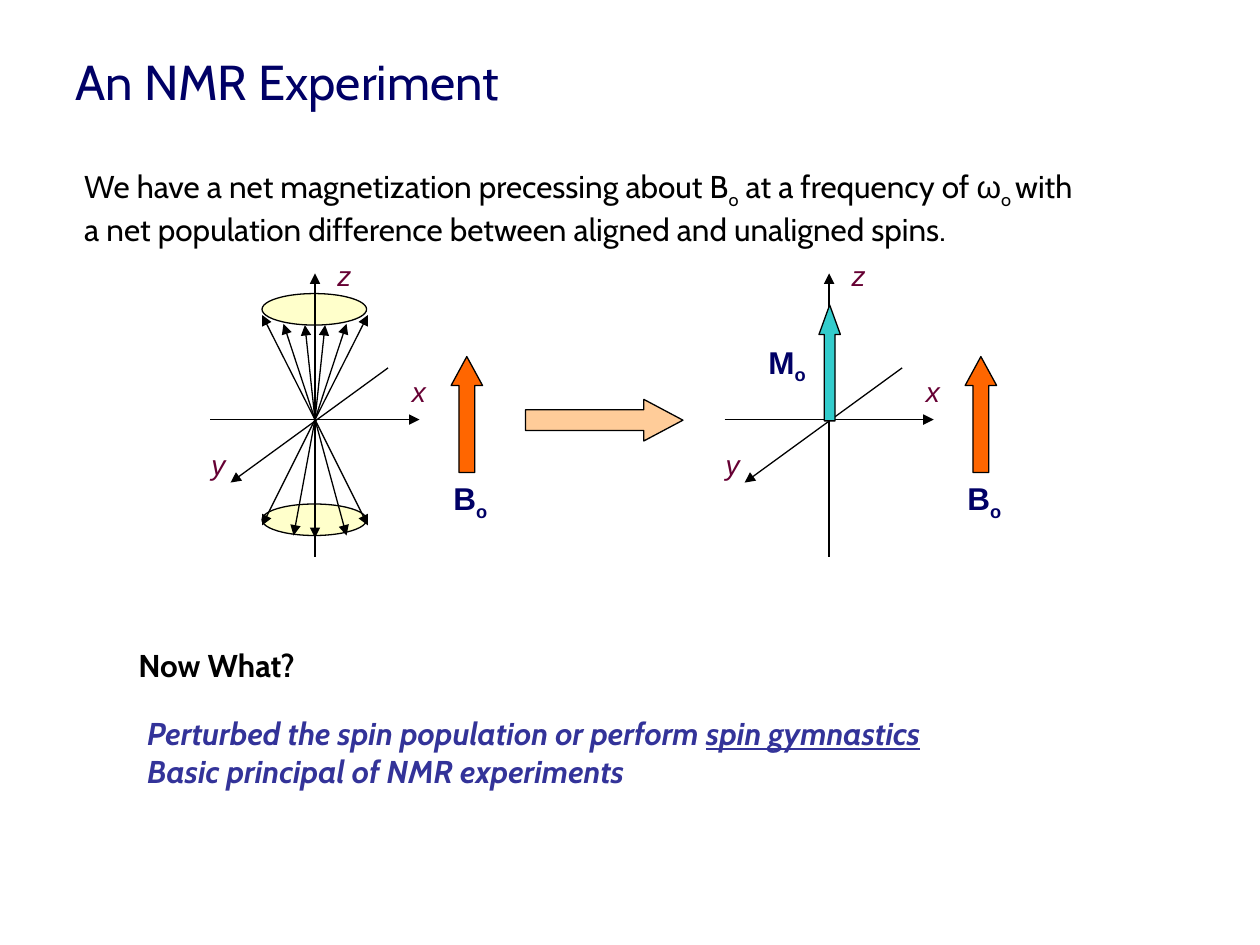
from dataclasses import dataclass, field

from lxml.etree import SubElement
from pptx import Presentation
from pptx.dml.color import RGBColor
from pptx.enum.shapes import MSO_CONNECTOR, MSO_SHAPE
from pptx.enum.text import MSO_ANCHOR, PP_ALIGN
from pptx.oxml.ns import qn
from pptx.util import Inches, Pt

COLORS = {
    "navy": "000066",
    "black": "000000",
    "plum": "660033",
    "indigo": "333399",
    "cone": "FFFF99",
    "transition": "FFCC99",
    "net": "33CCCC",
    "field": "FF6600",
}

TITLE = {"name": "Cabin", "size": Pt(28)}
BODY = {"name": "Cabin", "size": Pt(18)}
HEADING = {**BODY, "bold": True}
ANSWER = {**HEADING, "italic": True}
AXIS_LABEL = {"name": "Arial", "size": Pt(16), "italic": True}
VECTOR_LABEL = {"name": "Arial", "size": Pt(18), "bold": True}

CENTER_Y = 3.33
SPIN_ORIGIN = 2.5
NET_ORIGIN = 6.58
# Spin tips as offsets from the origin of the cone
SPIN_TIPS = [
    (-0.42, -0.83), (-0.25, -0.76), (-0.08, -0.75),
    (0.08, -0.75), (0.25, -0.76), (0.42, -0.83),
    (-0.42, 0.84), (-0.17, 0.92), (0, 0.94), (0.25, 0.92), (0.42, 0.84),
]


@dataclass
class Span:
    text: str
    subscript: bool = False
    overrides: dict = field(default_factory=dict)


@dataclass
class Axis:
    label: str
    start: tuple[float, float]
    end: tuple[float, float]
    label_offset: tuple[float, float]


@dataclass
class BlockArrow:
    preset: MSO_SHAPE
    box: tuple[float, float, float, float]
    head: float
    color: str


AXES = [
    Axis("z", (0, 1.09), (0, -1.16), (0.08, -1.33)),
    Axis("y", (0.58, -0.41), (-0.67, 0.5), (-0.92, 0.17)),
    Axis("x", (-0.83, 0), (0.83, 0), (0.67, -0.41)),
]


def rgb(color: str) -> RGBColor:
    return RGBColor.from_string(COLORS[color])


def write(frame, paragraphs: list[list[Span]], style: dict, color: str) -> None:
    for index, spans in enumerate(paragraphs):
        paragraph = frame.paragraphs[0] if index == 0 else frame.add_paragraph()
        paragraph.alignment = PP_ALIGN.LEFT
        for span in spans:
            run = paragraph.add_run()
            run.text = span.text
            for attribute, value in {**style, **span.overrides}.items():
                setattr(run.font, attribute, value)
            run.font.color.rgb = rgb(color)
            if span.subscript:
                run._r.get_or_add_rPr().set("baseline", "-25000")


def add_text(slide, box: tuple, paragraphs: list[list[Span]], style: dict,
             color: str, wrap: bool = False) -> None:
    frame = slide.shapes.add_textbox(*map(Inches, box)).text_frame
    frame.word_wrap = wrap
    write(frame, paragraphs, style, color)


def add_arrow(slide, start: tuple, end: tuple) -> None:
    arrow = slide.shapes.add_connector(
        MSO_CONNECTOR.STRAIGHT, *map(Inches, (*start, *end)))
    arrow.line.color.rgb = rgb("black")
    arrow.line.width = Pt(0.75)
    SubElement(arrow.line._get_or_add_ln(), qn("a:tailEnd"), type="triangle")
    SubElement(arrow._element.spPr, qn("a:effectLst"))


def add_outlined(slide, preset: MSO_SHAPE, box: tuple, color: str):
    shape = slide.shapes.add_shape(preset, *map(Inches, box))
    shape.shadow.inherit = False
    shape.fill.solid()
    shape.fill.fore_color.rgb = rgb(color)
    shape.line.color.rgb = rgb("black")
    shape.line.width = Pt(0.75)
    return shape


def add_block_arrow(slide, arrow: BlockArrow) -> None:
    shape = add_outlined(slide, arrow.preset, arrow.box, arrow.color)
    shape.adjustments[0] = 0.5
    shape.adjustments[1] = arrow.head


def add_cone_base(slide, top: float) -> None:
    base = add_outlined(slide, MSO_SHAPE.OVAL,
                        (SPIN_ORIGIN - 0.42, top, 0.83, 0.25), "cone")
    fill_color = base._element.spPr.find(qn("a:solidFill"))[0]
    SubElement(fill_color, qn("a:alpha"), val="50000")


def add_vector_label(slide, letter: str, box: tuple) -> None:
    add_text(slide, box, [[Span(letter), Span("o", True)]], VECTOR_LABEL, "navy")


def add_axes_and_field(slide, origin: float) -> None:
    """Draw the x, y and z axes around an origin with the field Bo beside them."""
    def place(offset: tuple) -> tuple:
        return origin + offset[0], CENTER_Y + offset[1]

    for axis in AXES:
        add_arrow(slide, place(axis.start), place(axis.end))
        add_text(slide, (*place(axis.label_offset), 0.31, 0.37),
                 [[Span(axis.label)]], AXIS_LABEL, "plum")
    add_block_arrow(slide, BlockArrow(
        MSO_SHAPE.UP_ARROW, (origin + 1.08, 2.83, 0.25, 0.92), 0.92, "field"))
    add_vector_label(slide, "B", (origin + 1, 3.75, 0.48, 0.4))


def add_title(slide) -> None:
    title = slide.shapes.title
    placement = {"left": 0.5, "top": 0.36, "width": 4.42, "height": 0.57}
    for attribute, value in placement.items():
        setattr(title, attribute, Inches(value))
    title.text_frame.vertical_anchor = MSO_ANCHOR.TOP
    write(title.text_frame, [[Span("An NMR Experiment")]], TITLE, "navy")


def main() -> None:
    presentation = Presentation()
    presentation.slide_width = Inches(10)
    presentation.slide_height = Inches(7.5)
    slide = presentation.slides.add_slide(presentation.slide_layouts[5])

    add_title(slide)
    add_text(slide, (0.57, 1.28, 8.18, 0.7), [[
        Span("We have a net magnetization precessing about B"),
        Span("o", True),
        Span(" at a frequency of "),
        Span("ω", overrides={"name": "Arial"}),
        Span("o ", True),
        Span("with a net population difference between aligned and "
             "unaligned spins."),
    ]], BODY, "black", wrap=True)

    for top in (2.33, 4):
        add_cone_base(slide, top)
    for dx, dy in SPIN_TIPS:
        add_arrow(slide, (SPIN_ORIGIN, CENTER_Y),
                  (SPIN_ORIGIN + dx, CENTER_Y + dy))
    for origin in (SPIN_ORIGIN, NET_ORIGIN):
        add_axes_and_field(slide, origin)

    add_block_arrow(slide, BlockArrow(
        MSO_SHAPE.RIGHT_ARROW, (4.17, 3.17, 1.25, 0.33), 0.94, "transition"))
    add_block_arrow(slide, BlockArrow(
        MSO_SHAPE.UP_ARROW, (6.5, 2.42, 0.17, 0.92), 1.38, "net"))
    add_vector_label(slide, "M", (6, 2.67, 0.51, 0.4))

    add_text(slide, (1, 5.08, 1.66, 0.4), [[Span("Now What?")]],
             HEADING, "black")
    add_text(slide, (1.07, 5.62, 7.46, 0.7), [
        [Span("Perturbed the spin population or perform "),
         Span("spin gymnastics", overrides={"underline": True})],
        [Span("Basic principal of NMR experiments")],
    ], ANSWER, "indigo")

    presentation.save("out.pptx")


if __name__ == "__main__":
    main()
